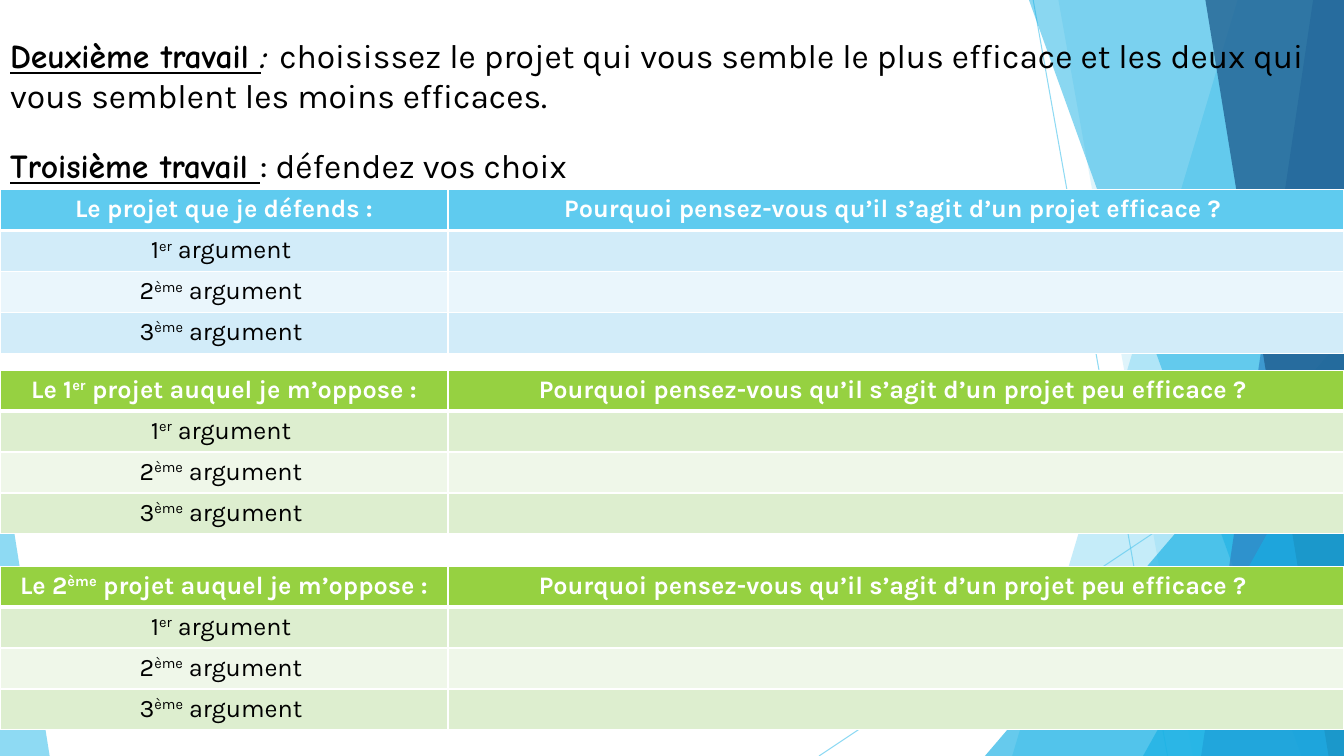
from dataclasses import dataclass

from lxml import etree
from pptx import Presentation
from pptx.dml.color import RGBColor as RGB
from pptx.enum.shapes import MSO_CONNECTOR as CONNECTOR, MSO_SHAPE as SHAPE
from pptx.enum.text import MSO_ANCHOR as ANCHOR, MSO_AUTO_SIZE as AUTO_SIZE, PP_ALIGN as ALIGN
from pptx.oxml.ns import qn
from pptx.util import Pt


@dataclass(frozen=True)
class Theme:
    body_font: str = "Karla"
    label_font: str = "Comic Neue"
    title_size: int = 24
    table_size: int = 18
    black: str = "000000"
    white: str = "FFFFFF"
    sky: str = "5FCBEF"
    cyan: str = "17B0E4"
    blue: str = "2E83C3"
    navy: str = "226292"
    # header, odd row, even row
    defend: tuple = ("5FCBEF", "D2ECF9", "EAF6FC")
    oppose: tuple = ("96D141", "DDEECF", "EFF7E9")


T = Theme()
W, H = 960, 540


def add_run(p, text, font=T.body_font, size=T.table_size, color=T.black,
            bold=False, italic=False, underline=False, raised=False):
    r = p.add_run()
    r.text = text
    f = r.font
    f.name, f.size, f.bold, f.italic, f.underline = font, Pt(size), bold, italic, underline
    f.color.rgb = RGB.from_string(color)
    if raised:
        r._r.get_or_add_rPr().set("baseline", "30000")


def add_marked_text(p, text, **fmt):
    """Write text in which parts between carets are superscript."""
    for i, part in enumerate(text.split("^")):
        add_run(p, part, raised=i % 2 == 1, **fmt)


def paint(fill, color):
    fill.solid()
    fill.fore_color.rgb = RGB.from_string(color)


def set_opacity(spPr, percent):
    color = next(spPr.iter(qn("a:srgbClr")))
    etree.SubElement(color, qn("a:alpha"), val=str(percent * 1000))


def finish_facet(sp, color, opacity):
    sp.shadow.inherit = False
    sp.line.fill.background()
    paint(sp.fill, color)
    set_opacity(sp.element.spPr, opacity)


def add_ray(s, x1, y1, x2, y2):
    ray = s.shapes.add_connector(CONNECTOR.STRAIGHT, Pt(x1), Pt(y1), Pt(x2), Pt(y2))
    ray.line.width = Pt(0.75)
    paint(ray.line.fill, T.sky)
    spPr = ray.element.spPr
    set_opacity(spPr, 70)
    etree.SubElement(spPr, qn("a:effectLst"))


def add_band(s, top_x, bottom_x, color, opacity):
    """Fill the area from a slanted edge to the right side of the slide."""
    builder = s.shapes.build_freeform(Pt(top_x), 0)
    builder.add_line_segments([(Pt(x), Pt(y)) for x, y in ((W, 0), (W, H), (bottom_x, H))])
    finish_facet(builder.convert_to_shape(), color, opacity)


def add_corner(s, x, w, h, apex, color, opacity):
    """Stand a triangle on the bottom edge of the slide."""
    sp = s.shapes.add_shape(SHAPE.ISOSCELES_TRIANGLE, Pt(x), Pt(H - h), Pt(w), Pt(h))
    sp.adjustments[0] = apex
    finish_facet(sp, color, opacity)


def add_backdrop(s):
    add_ray(s, 738, 0, 834, H)
    add_ray(s, W, 290, 585, H)
    add_band(s, 884, 723, T.sky, 36)
    add_band(s, 756, 852, T.sky, 20)
    add_corner(s, 703.5, 256.5, 300, 1, T.cyan, 66)
    add_band(s, 735, 929.5, T.cyan, 50)
    add_band(s, 938, 858, T.blue, 70)
    add_band(s, 861, 949, T.navy, 80)
    add_corner(s, 816.5, 143.5, 257, 1, T.cyan, 66)
    add_corner(s, 0, 35.5, 224, 0, T.sky, 70)


def add_instructions(s, x, y, w, h):
    title = s.shapes.title
    title.left, title.top, title.width, title.height = Pt(x), Pt(y), Pt(w), Pt(h)
    title.element.getparent().append(title.element)  # in front of the backdrop
    tf = title.text_frame
    tf.word_wrap = True
    tf.auto_size = AUTO_SIZE.NONE
    tf.vertical_anchor = ANCHOR.TOP
    tf.margin_top = Pt(25)
    label = dict(font=T.label_font, size=T.title_size, bold=True)

    p = tf.paragraphs[0]
    p.alignment = ALIGN.LEFT
    add_run(p, "Deuxième travail ", underline=True, **label)
    add_run(p, ": ", italic=True, **label)
    add_run(p, "choisissez le projet qui vous semble le plus efficace et les deux "
               "qui vous semblent les moins efficaces.", size=T.title_size)

    p = tf.add_paragraph()
    p.alignment = ALIGN.LEFT
    p.space_before = Pt(21)
    add_run(p, "Troisième travail ", underline=True, **label)
    add_run(p, ": défendez vos choix", size=T.title_size)


def set_borders(cell, bottom=1):
    tcPr = cell._tc.get_or_add_tcPr()
    for i, (side, width) in enumerate((("L", 1), ("R", 1), ("T", 1), ("B", bottom))):
        ln = etree.Element(qn(f"a:ln{side}"), w=str(Pt(width)))
        fill = etree.SubElement(ln, qn("a:solidFill"))
        etree.SubElement(fill, qn("a:srgbClr"), val=T.white)
        tcPr.insert(i, ln)


def add_argument_table(s, x, y, w, project, question, colors):
    rows = [(project, question)] + [
        (f"{n}^{'er' if n == 1 else 'ème'}^ argument ", "") for n in (1, 2, 3)]
    row_h = 29.2
    table = s.shapes.add_table(len(rows), 2, Pt(x), Pt(y), Pt(w), Pt(row_h * len(rows))).table
    table.columns[0].width, table.columns[1].width = Pt(w / 3), Pt(w * 2 / 3)
    header, odd, even = colors
    for i, texts in enumerate(rows):
        table.rows[i].height = Pt(row_h)
        is_header = i == 0
        for j, text in enumerate(texts):
            cell = table.cell(i, j)
            paint(cell.fill, header if is_header else odd if i % 2 else even)
            set_borders(cell, bottom=3 if is_header else 1)
            if text:
                p = cell.text_frame.paragraphs[0]
                p.alignment = ALIGN.CENTER
                add_marked_text(p, text, bold=is_header,
                                color=T.white if is_header else T.black)


def add_debate_slide(prs):
    s = prs.slides.add_slide(prs.slide_layouts[5])
    add_backdrop(s)
    add_instructions(s, 0, 0, W, 291)
    question = "Pourquoi pensez-vous qu’il s’agit d’un projet {} ? "
    tables = (
        (135.5, "Le projet que je défends :", "efficace", T.defend),
        (264.5, "Le 1^er^ projet auquel je m’oppose :", "peu efficace", T.oppose),
        (404.5, "Le 2^ème^ projet auquel je m’oppose :", "peu efficace", T.oppose),
    )
    for y, project, verdict, colors in tables:
        add_argument_table(s, 0, y, W, project, question.format(verdict), colors)


def main():
    prs = Presentation()
    prs.slide_width, prs.slide_height = Pt(W), Pt(H)
    add_debate_slide(prs)
    prs.save("out.pptx")


if __name__ == "__main__":
    main()
